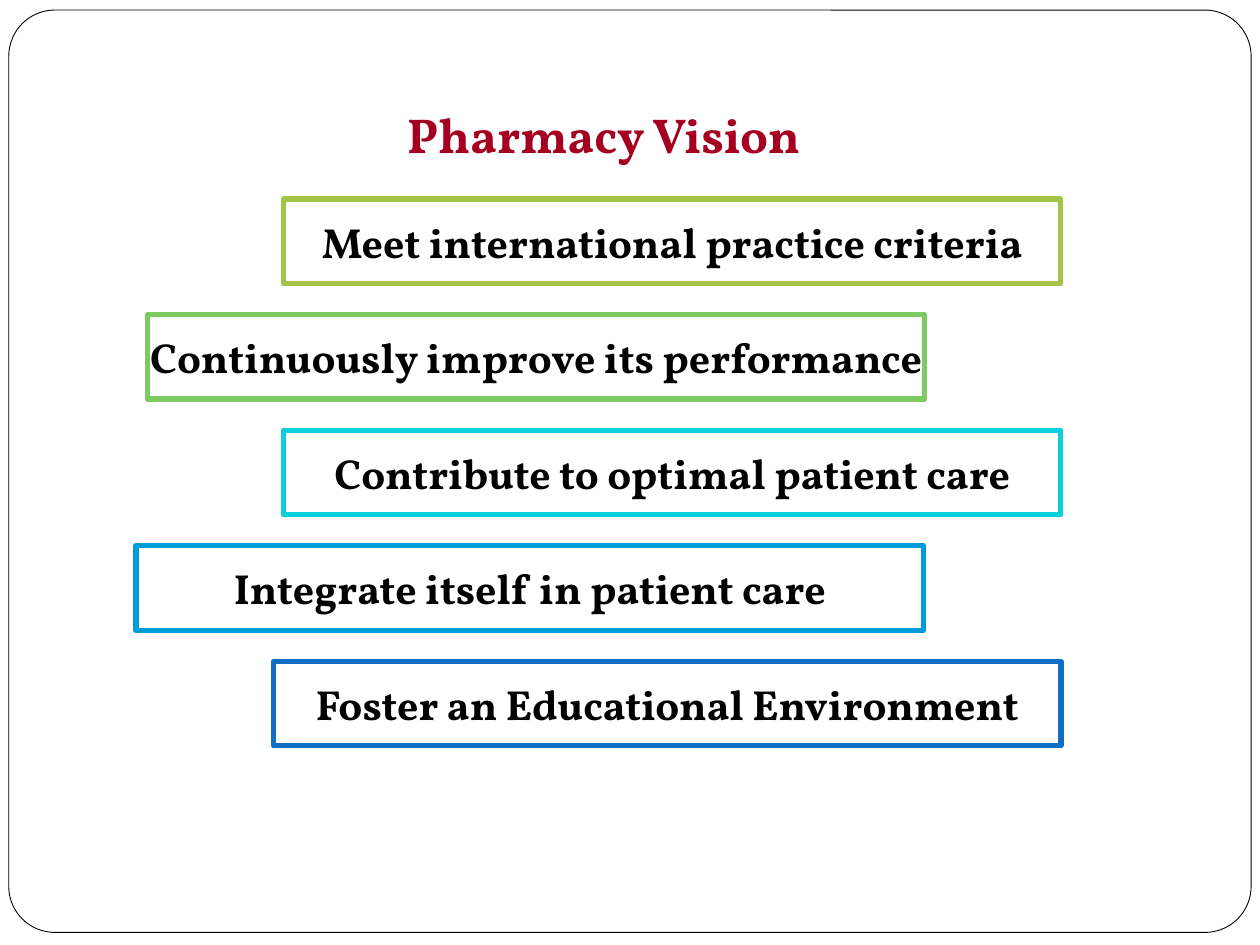
import pptx
import pptx.dml.color
import pptx.enum.shapes
import pptx.enum.text
import pptx.util
from pptx.util import Inches

COLORS = {
    "white": "FFFFFF",
    "black": "000000",
    "title": "A50021",
    "lime": "A5C249",
    "green": "7CCA62",
    "cyan": "0BD0D9",
    "sky": "009DD9",
    "blue": "0F6FC6",
}
FONT = "Vollkorn"
GOALS = [
    ("Meet international practice criteria", "lime", 2.25, 6.17),
    ("Continuously improve its performance", "green", 1.17, 6.17),
    ("Contribute to optimal patient care", "cyan", 2.25, 6.17),
    ("Integrate itself in patient care", "sky", 1.08, 6.25),
    ("Foster an Educational Environment", "blue", 2.17, 6.25),
]
GOAL_HEIGHT = 0.67


def rgb(name):
    return pptx.dml.color.RGBColor.from_string(COLORS[name])


def set_all(target, values):
    for name, value in values.items():
        setattr(target, name, value)


def write(frame, text, size, color, **layout):
    set_all(frame, layout)
    paragraph = frame.paragraphs[0]
    paragraph.alignment = pptx.enum.text.PP_ALIGN.CENTER
    run = paragraph.add_run()
    run.text = text
    set_all(run.font, {"name": FONT, "size": pptx.util.Pt(size), "bold": True})
    run.font.color.rgb = rgb(color)


def add_outlined(slide, kind, box, color, width):
    outlined = slide.shapes.add_shape(kind, *map(Inches, box))
    outlined.shadow.inherit = False
    outlined.fill.solid()
    outlined.fill.fore_color.rgb = rgb("white")
    outlined.line.color.rgb = rgb(color)
    outlined.line.width = pptx.util.Pt(width)
    return outlined


def add_border(slide, box):
    border = add_outlined(
        slide, pptx.enum.shapes.MSO_SHAPE.ROUNDED_RECTANGLE, box, "black", 0.5)
    border.adjustments[0] = 0.05
    title = slide.shapes.title
    title.element.addprevious(border.element)


def add_title(slide, box):
    title = slide.shapes.title
    set_all(title, dict(zip(("left", "top", "width", "height"), map(Inches, box))))
    write(title.text_frame, "Pharmacy Vision", 28, "title",
          vertical_anchor=pptx.enum.text.MSO_ANCHOR.BOTTOM,
          auto_size=pptx.enum.text.MSO_AUTO_SIZE.NONE,
          word_wrap=True,
          margin_right=Inches(0.18),
          margin_bottom=Inches(0.4))


def add_goals(slide, top, bottom):
    step = (bottom - top - GOAL_HEIGHT) / (len(GOALS) - 1)
    for index, (text, color, left, width) in enumerate(GOALS):
        goal = add_outlined(
            slide, pptx.enum.shapes.MSO_SHAPE.RECTANGLE,
            (left, top + index * step, width, GOAL_HEIGHT), color, 3)
        write(goal.text_frame, text, 24, "black",
              vertical_anchor=pptx.enum.text.MSO_ANCHOR.MIDDLE,
              word_wrap=False)


def main():
    deck = pptx.Presentation()
    set_all(deck, {"slide_width": Inches(10), "slide_height": Inches(7.5)})
    slide = deck.slides.add_slide(deck.slide_layouts.get_by_name("Title Only"))
    add_border(slide, (0.07, 0.08, 9.86, 7.32))
    add_title(slide, (0.33, 0.25, 9, 1.45))
    add_goals(slide, 1.58, 5.92)
    deck.save("out.pptx")


if __name__ == "__main__":
    main()
